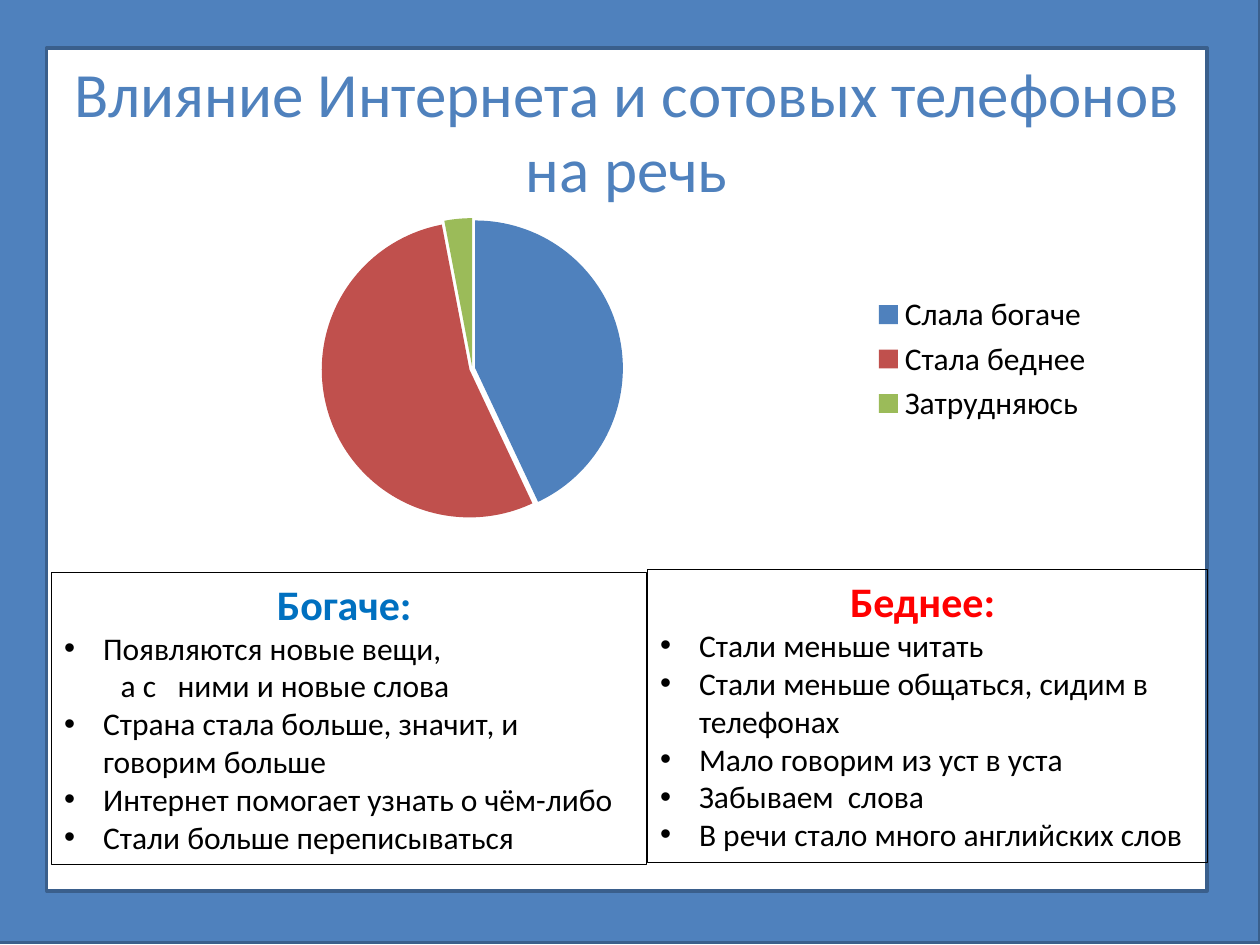
"""Build a slide on how the Internet and mobile phones affect speech."""
from lxml.etree import SubElement
from pptx import Presentation
from pptx.chart.data import CategoryChartData
from pptx.dml.color import RGBColor
from pptx.enum.chart import XL_CHART_TYPE, XL_LEGEND_POSITION
from pptx.enum.shapes import MSO_SHAPE
from pptx.enum.text import MSO_ANCHOR, PP_ALIGN
from pptx.oxml import parse_xml
from pptx.oxml.ns import nsdecls, qn
from pptx.util import Inches, Pt

FONT = "Calibri"
COLORS = {
    "blue": "4F81BD", "edge": "3A5F8C", "white": "FFFFFF", "black": "000000",
    "red": "C0504D", "green": "9BBB59", "rich": "0070C0", "poor": "FF0000",
}
VOTES = [("Слала богаче", 43, "blue"), ("Стала беднее", 54, "red"),
         ("Затрудняюсь", 3, "green")]
PLOT = {"x": 0.2, "y": 0.07, "w": 0.31, "h": 0.92}
RICH = [
    ("Появляются новые вещи,", True),
    ("а с   ними и новые слова", False),
    ("Страна стала больше, значит, и говорим больше", True),
    ("Интернет помогает узнать о чём-либо", True),
    ("Стали больше переписываться", True),
]
POOR = [
    ("Стали меньше читать", True),
    ("Стали меньше общаться, сидим в телефонах", True),
    ("Мало говорим из уст в уста", True),
    ("Забываем  слова", True),
    ("В речи стало много английских слов", True),
]


def color(name):
    return RGBColor.from_string(COLORS[name])


def add_rect(slide, box, fill, edge, width):
    rect = slide.shapes.add_shape(MSO_SHAPE.RECTANGLE, *map(Inches, box))
    rect.shadow.inherit = False
    if fill:
        rect.fill.solid()
        rect.fill.fore_color.rgb = color(fill)
    else:
        rect.fill.background()
    rect.line.color.rgb = color(edge)
    rect.line.width = Pt(width)
    return rect


def add_run(para, text, size, tint, bold=False):
    run = para.add_run()
    run.text = text
    font = run.font
    font.name, font.size, font.bold = FONT, Pt(size), bold
    font.color.rgb = color(tint)


def indent(para, left, bullet):
    props = para._p.get_or_add_pPr()
    props.set("marL", str(Inches(left)))
    if bullet:
        props.set("indent", str(-Inches(left)))
        SubElement(props, qn("a:buFont"), typeface="Arial")
        SubElement(props, qn("a:buChar"), char="•")


def add_title(slide, box, text):
    frame = slide.shapes.add_textbox(*map(Inches, box)).text_frame
    frame.word_wrap = True
    frame.vertical_anchor = MSO_ANCHOR.MIDDLE
    para = frame.paragraphs[0]
    para.alignment = PP_ALIGN.CENTER
    add_run(para, text, 36, "blue")


def add_panel(slide, box, head, tint, items):
    frame = add_rect(slide, box, None, "black", 0.25).text_frame
    frame.word_wrap = True
    frame.vertical_anchor = MSO_ANCHOR.TOP
    para = frame.paragraphs[0]
    para.alignment = PP_ALIGN.CENTER
    add_run(para, head, 24, tint, True)
    for text, bullet in items:
        para = frame.add_paragraph()
        para.alignment = PP_ALIGN.LEFT
        indent(para, 0.31 if bullet else 0.45, bullet)
        add_run(para, text, 18, "black")


def place_plot(chart):
    area = chart._chartSpace.chart.plotArea
    for old in area.findall(qn("c:layout")):
        area.remove(old)
    modes = "".join(f'<c:{k}Mode val="edge"/>' for k in "xy")
    sizes = "".join(f'<c:{k} val="{v}"/>' for k, v in PLOT.items())
    area.insert(0, parse_xml(
        f'<c:layout {nsdecls("c")}><c:manualLayout>'
        f'<c:layoutTarget val="inner"/>{modes}{sizes}'
        '</c:manualLayout></c:layout>'))


def add_pie(slide, box):
    data = CategoryChartData()
    names, values, tints = zip(*VOTES)
    data.categories = names
    data.add_series("Series 1", values)
    chart = slide.shapes.add_chart(
        XL_CHART_TYPE.PIE, *map(Inches, box), data).chart
    chart.has_title = False
    chart.font.name, chart.font.size = FONT, Pt(18)
    chart.font.color.rgb = color("black")
    chart.has_legend = True
    chart.legend.position = XL_LEGEND_POSITION.RIGHT
    chart.legend.include_in_layout = False
    plot = chart.plots[0]
    plot.vary_by_categories = True
    series = plot.series[0]
    for i, tint in enumerate(tints):
        fill = series.points[i].format.fill
        fill.solid()
        fill.fore_color.rgb = color(tint)
    first = series._element.find(qn("c:dPt"))
    first.addprevious(parse_xml(f'<c:explosion {nsdecls("c")} val="2"/>'))
    place_plot(chart)


def main():
    deck = Presentation()
    deck.slide_width, deck.slide_height = Inches(10), Inches(7.5)
    slide = deck.slides.add_slide(deck.slide_layouts[6])
    add_rect(slide, (-0.04, -0.02, 10.04, 7.5), "blue", "edge", 2)
    add_rect(slide, (0.37, 0.38, 9.21, 6.69), "white", "edge", 2)
    add_title(slide, (0.41, 0.52, 9.13, 1.02),
              "Влияние Интернета и сотовых телефонов на речь")
    add_pie(slide, (0.98, 1.55, 7.8, 2.6))
    add_panel(slide, (0.41, 4.54, 4.72, 2.32), "Богаче: ", "rich", RICH)
    add_panel(slide, (5.14, 4.52, 4.44, 2.32), "Беднее: ", "poor", POOR)
    deck.save("out.pptx")


if __name__ == "__main__":
    main()
